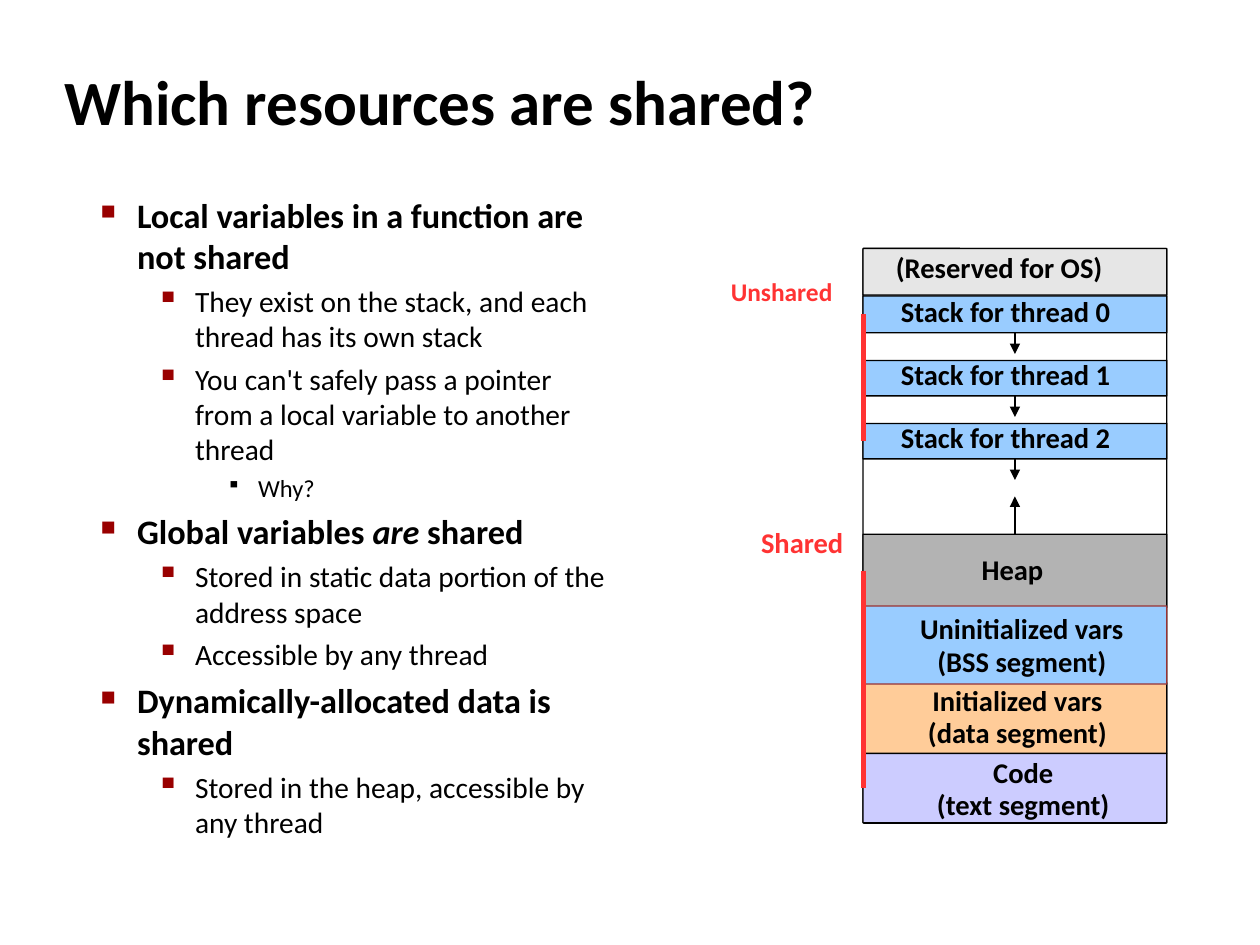
from lxml import etree
from pptx import Presentation
from pptx.dml.color import RGBColor
from pptx.enum import shapes, text
from pptx.oxml import ns
from pptx.util import Pt

FONT = "Calibri"
BLACK = RGBColor(0x00, 0x00, 0x00)
MAROON = RGBColor(0x99, 0x00, 0x00)
BROWN = RGBColor(0x99, 0x33, 0x33)
RED = RGBColor(0xFF, 0x33, 0x33)
PALE_GRAY = RGBColor(0xE6, 0xE6, 0xE6)
GRAY = RGBColor(0xB3, 0xB3, 0xB3)
BLUE = RGBColor(0x99, 0xCC, 0xFF)
ORANGE = RGBColor(0xFF, 0xCC, 0x99)
LILAC = RGBColor(0xCC, 0xCC, 0xFF)

LEVELS = [
    dict(size=19.6, bold=True, left=20.9, hang=27.4, char="■", color=MAROON, pct=60),
    dict(size=16.8, bold=False, left=54, hang=22.3, char="▪", color=MAROON, pct=110),
    dict(size=14, bold=False, left=90, hang=18, char="▪", color=BLACK, pct=80),
]
POINTS = [
    (0, ["Local variables in a function are not shared"]),
    (1, ["They exist on the stack, and each thread has its own stack"]),
    (1, ["You can't safely pass a pointer from a local variable to another thread"]),
    (2, ["Why?"]),
    (0, ["Global variables ", "are", " shared"]),
    (1, ["Stored in static data portion of the address space"]),
    (1, ["Accessible by any thread"]),
    (0, ["Dynamically-allocated data is shared"]),
    (1, ["Stored in the heap, accessible by any thread"]),
]
SEGMENTS = [
    ("os", 0, 26.6, PALE_GRAY, BLACK, ["(Reserved for OS)"], (18.7, 2.2, 142.6)),
    ("stack0", 27.2, 20.9, BLUE, BLACK, ["Stack for thread 0"], (21.6, 0, 138)),
    ("stack1", 64, 20.2, BLUE, BLACK, ["Stack for thread 1"], (21.6, -0.7, 138)),
    ("stack2", 100, 20.2, BLUE, BLACK, ["Stack for thread 2"], (21.6, -0.7, 138)),
    ("code", 288.6, 39.6, LILAC, BLACK, ["Code", "(text segment)"], (34.6, 2.2, 113.8)),
    ("data", 248.2, 40.3, ORANGE, BLACK, ["Initialized vars", "(data segment)"], (29.5, 1.4, 117.4)),
    ("heap", 163.3, 41.8, GRAY, BLACK, ["Heap"], (67.7, 11.5, 41.8)),
    ("bss", 204.3, 44.6, BLUE, BROWN, ["Uninitialized vars", "(BSS segment)"], (21.6, 4.3, 138.2)),
]


def add_run(p, words, size, color=BLACK, bold=True, italic=False):
    """Append one formatted run to a paragraph."""
    r = p.add_run()
    r.text = words
    f = r.font
    f.name, f.size, f.bold, f.italic = FONT, Pt(size), bold, italic
    f.color.rgb = color


def add_bullet(p, level):
    """Give a paragraph the indent and bullet of its level."""
    pPr = p._p.get_or_add_pPr()
    pPr.set("marL", str(Pt(level["left"])))
    pPr.set("indent", str(-Pt(level["hang"])))
    clr = etree.SubElement(pPr, ns.qn("a:buClr"))
    etree.SubElement(clr, ns.qn("a:srgbClr"), val=str(level["color"]))
    etree.SubElement(pPr, ns.qn("a:buSzPct"), val=str(level["pct"] * 1000))
    etree.SubElement(pPr, ns.qn("a:buChar"), char=level["char"])


def add_title(s, x, y, w, h):
    """Place and format the slide title."""
    sp = s.shapes.title
    sp.left, sp.top, sp.width, sp.height = Pt(x), Pt(y), Pt(w), Pt(h)
    tf = sp.text_frame
    tf.vertical_anchor = text.MSO_ANCHOR.MIDDLE
    p = tf.paragraphs[0]
    p.alignment, p.line_spacing = text.PP_ALIGN.LEFT, 0.95
    add_run(p, "Which resources are shared?", 36)


def add_points(s, x, y, w, h):
    """Write the bulleted outline."""
    tf = s.shapes.add_textbox(Pt(x), Pt(y), Pt(w), Pt(h)).text_frame
    tf.word_wrap = True
    for i, (depth, runs) in enumerate(POINTS):
        p = tf.add_paragraph() if i else tf.paragraphs[0]
        level = LEVELS[depth]
        p.level = depth
        p.space_before = Pt(round(level["size"] * 0.24, 1))
        add_bullet(p, level)
        for words in runs:
            add_run(p, words, level["size"], bold=level["bold"], italic=words == "are")


def add_label(s, x, y, w, lines, size=16.3, color=BLACK):
    """Add a bold label without margins, centred when it has two lines."""
    tf = s.shapes.add_textbox(Pt(x), Pt(y), Pt(w), Pt(18.9 * len(lines))).text_frame
    tf.margin_left = tf.margin_top = tf.margin_right = tf.margin_bottom = 0
    tf.word_wrap = True
    for i, words in enumerate(lines):
        p = tf.add_paragraph() if i else tf.paragraphs[0]
        p.alignment = text.PP_ALIGN.CENTER if len(lines) > 1 else text.PP_ALIGN.LEFT
        p.line_spacing = 0.95
        add_run(p, words, size, color)


def add_block(s, x, y, w, h, fill, line):
    """Add an outlined memory block, unfilled when fill is None."""
    sp = s.shapes.add_shape(shapes.MSO_SHAPE.ROUNDED_RECTANGLE, Pt(x), Pt(y), Pt(w), Pt(h))
    sp.adjustments[0] = 0.004
    sp.shadow.inherit = False
    if fill is None:
        sp.fill.background()
    else:
        sp.fill.solid()
        sp.fill.fore_color.rgb = fill
    sp.line.color.rgb, sp.line.width = line, Pt(0.75)
    return sp


def add_link(s, x, y, start, site, color, width):
    """Add a line from a site of a block to a point."""
    c = s.shapes.add_connector(shapes.MSO_CONNECTOR.STRAIGHT, Pt(x), Pt(y), Pt(x), Pt(y))
    c.begin_connect(start, site)
    c.line.color.rgb, c.line.width = color, Pt(width)
    etree.SubElement(c._element.spPr, ns.qn("a:effectLst"))
    return c


def add_memory_map(s, x, y, w, h):
    """Draw the address space with growth arrows and sharing marks."""
    add_block(s, x, y, w, h, None, BLACK)
    blocks = {}
    for name, top, height, fill, line, lines, (dx, dy, label_w) in SEGMENTS:
        blocks[name] = add_block(s, x, y + top, w, height, fill, line)
        add_label(s, x + dx, y + top + dy, label_w, lines)
    for name, site, tip in [("stack0", 2, 60.3), ("stack1", 2, 96.3),
                            ("stack2", 2, 132.3), ("heap", 0, 141.7)]:
        c = add_link(s, x + w / 2, y + tip, blocks[name], site, BLACK, 0.75)
        etree.SubElement(c.line._get_or_add_ln(), ns.qn("a:tailEnd"), type="triangle")
    for first, last in [("heap", "code"), ("stack0", "stack2")]:
        c = add_link(s, x, y, blocks[first], 1, RED, 2.89)
        c.end_connect(blocks[last], 1)
    add_label(s, x - 58.3, y + 159.7, 53.3, ["Shared"], color=RED)
    add_label(s, x - 75.6, y + 17.1, 69.1, ["Unshared"], 14.5, RED)


def main():
    """Build the slide and save it."""
    prs = Presentation()
    prs.slide_width, prs.slide_height = Pt(720), Pt(540)
    s = prs.slides.add_slide(prs.slide_layouts[5])
    add_title(s, 29.5, 29.5, 597.6, 59.8)
    add_points(s, 50.4, 107.3, 304.6, 391.7)
    add_memory_map(s, 493.2, 142, 173.5, 328.4)
    prs.save("out.pptx")


if __name__ == "__main__":
    main()
